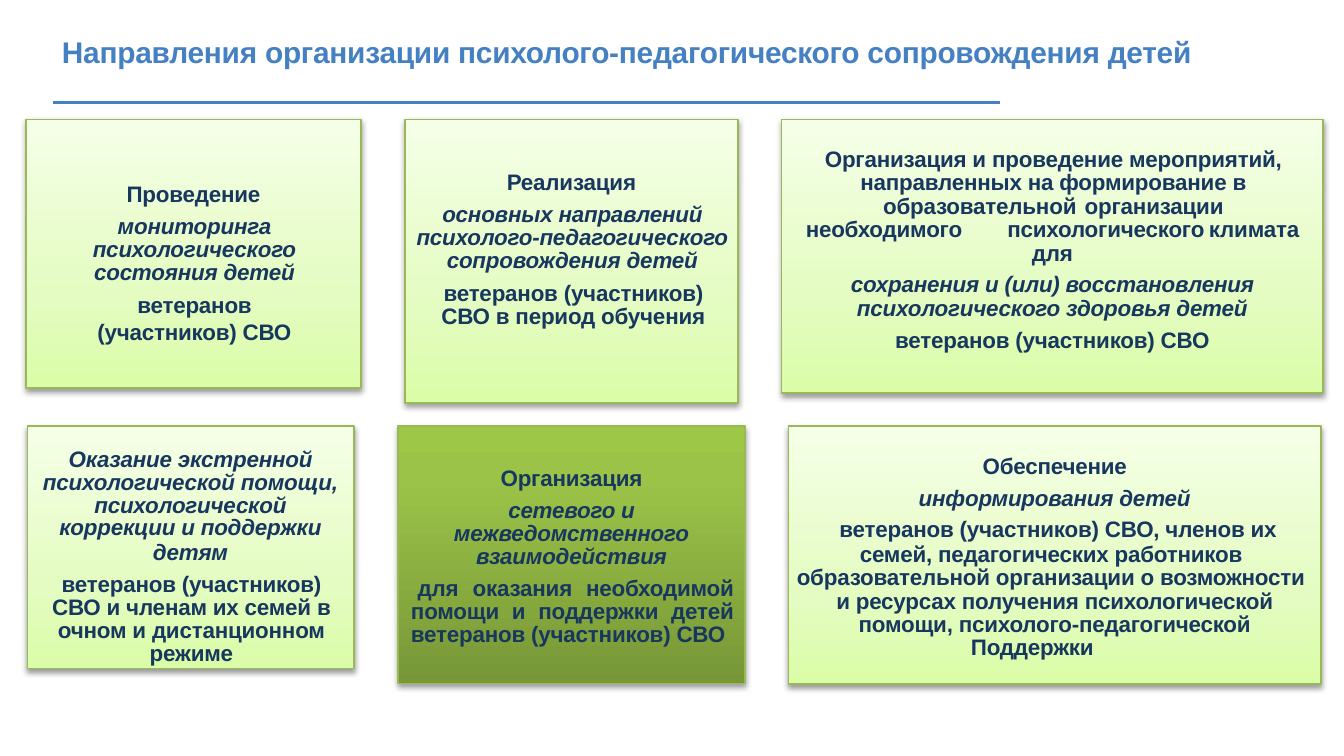
from dataclasses import dataclass
from typing import Optional, Union

from lxml.etree import SubElement
from pptx import Presentation
from pptx.dml.color import RGBColor
from pptx.enum.shapes import MSO_CONNECTOR, MSO_SHAPE
from pptx.enum.text import MSO_ANCHOR, PP_ALIGN
from pptx.oxml.ns import qn
from pptx.util import Length, Pt

BLUE, NAVY, GREEN = "4480C2", "17375E", "98B955"
LIGHT = ((0, "DAFDA7"), (35, "E4FCC2"), (100, "F5FFE7"))
DARK = ((0, "779737"), (80, "9BC348"), (100, "9DC746"))
TOP_ROW, BOTTOM_ROW = 64, 228.3


@dataclass
class Line:
    """One paragraph of a card; lengths in points, a float spacing is a ratio."""
    text: str
    italic: bool = False
    before: float = 0
    spacing: Optional[Union[float, Length]] = None
    left: float = 0
    right: float = 0
    first: float = 0
    tabs: tuple = ()
    align: PP_ALIGN = PP_ALIGN.CENTER


@dataclass
class Card:
    left: float
    top: float
    width: float
    height: float
    inset: float
    lines: list
    gradient: tuple = LIGHT


CARDS = [
    Card(13.9, TOP_ROW, 179.6, 143.8, 32.5, [
        Line("Проведение"),
        Line("мониторинга психологического состояния детей", True, 4.8, 0.86, 31, 30),
        Line("ветеранов (участников) СВО", False, 2.9, None, 31, 30),
    ]),
    Card(216.9, TOP_ROW, 178.5, 152, 26, [
        Line("Реализация"),
        Line("основных направлений психолого-педагогического сопровождения детей",
             True, 4.9, 0.86, 1, 0),
        Line("ветеранов (участников) СВО в период обучения", False, 4.9, Pt(12.5), 13, 11),
    ]),
    Card(418.8, TOP_ROW, 290, 146.6, 16, [
        Line("Организация и проведение мероприятий, направленных на формирование в "
             "образовательной\tорганизации", False, 0, 0.86, 20, 19, tabs=(139,)),
        Line("необходимого\tпсихологического\tклимата для", False, 0.1, Pt(12.5),
             11, 11, tabs=(109.4, 230.4)),
        Line("сохранения и (или) восстановления психологического здоровья детей",
             True, 4.6, Pt(12.5), 32, 32),
        Line("ветеранов (участников) СВО", False, 2.8),
    ]),
    Card(14.6, BOTTOM_ROW, 175, 130, 12.2, [
        Line("Оказание экстренной психологической помощи, психологической",
             True, 0, 0.86, 6, 6),
        Line("коррекции и поддержки", True, 0, Pt(11.6)),
        Line("детям", True, 0, Pt(13.4)),
        Line("ветеранов (участников) СВО и членам их семей в очном и дистанционном режиме",
             False, 4.7, 0.86, 8, 7),
    ]),
    Card(213.2, BOTTOM_ROW, 186, 138, 20.3, [
        Line("Организация"),
        Line("сетевого и межведомственного взаимодействия", True, 4.8, 0.86, 20, 20),
        Line("для оказания необходимой помощи и поддержки детей ветеранов (участников) СВО",
             False, 4.8, 0.86, 7, 6, 3.6, align=PP_ALIGN.JUSTIFY),
    ], DARK),
    Card(422.4, BOTTOM_ROW, 285.4, 138.2, 13.9, [
        Line("Обеспечение"),
        Line("информирования детей", True, 2.9),
        Line("ветеранов (участников) СВО, членов их", False, 2.9, Pt(13.4), 3.6),
        Line("семей, педагогических работников образовательной организации о возможности",
             False, 1, Pt(12.5), 3, 7),
        Line("и ресурсах получения психологической помощи, психолого-педагогической",
             False, 0.1, Pt(12.4), 22, 22),
        Line("Поддержки", False, 0, Pt(12.3), 0, 24),
    ]),
]


def colour(value: str) -> RGBColor:
    return RGBColor.from_string(value)


def add_run(paragraph, text: str, size: float, ink: str, italic: bool = False) -> None:
    run = paragraph.add_run()
    run.text = text
    font_format = {"name": "Arial", "size": Pt(size), "bold": True, "italic": italic}
    for name, value in font_format.items():
        setattr(run.font, name, value)
    run.font.color.rgb = colour(ink)
    run.font._element.set("spc", "-10")


def format_frame(frame, inset: float) -> None:
    frame_format = {"word_wrap": True, "vertical_anchor": MSO_ANCHOR.TOP,
                    "margin_left": 0, "margin_right": 0,
                    "margin_top": Pt(inset), "margin_bottom": 0}
    for name, value in frame_format.items():
        setattr(frame, name, value)


def add_line(paragraph, line: Line) -> None:
    paragraph_format = {"alignment": line.align, "space_before": Pt(line.before),
                        "line_spacing": line.spacing}
    for name, value in paragraph_format.items():
        setattr(paragraph, name, value)
    properties = paragraph._p.get_or_add_pPr()
    indents = {"marL": line.left, "marR": line.right, "indent": line.first}
    for name, value in indents.items():
        properties.set(name, str(int(Pt(value))))
    if line.tabs:
        tab_list = SubElement(properties, qn("a:tabLst"))
        for position in line.tabs:
            SubElement(tab_list, qn("a:tab"), pos=str(int(Pt(position))), algn="l")
    add_run(paragraph, line.text, 12, NAVY, line.italic)


def set_gradient(shape, stops: tuple) -> None:
    """Fill from bottom to top through the given percent and colour stops."""
    shape.fill.gradient()
    shape.fill.gradient_angle = 90
    stop_list = shape._element.spPr.find(qn("a:gradFill")).find(qn("a:gsLst"))
    for old_stop in list(stop_list):
        stop_list.remove(old_stop)
    for percent, value in stops:
        stop = SubElement(stop_list, qn("a:gs"), pos=str(percent * 1000))
        SubElement(stop, qn("a:srgbClr"), val=value)


def add_shadow(shape) -> None:
    shape.shadow.inherit = False
    effects = shape._element.spPr.find(qn("a:effectLst"))
    shadow = SubElement(effects, qn("a:outerShdw"), blurRad=str(int(Pt(3.1))),
                        dist=str(int(Pt(1.6))), dir="5400000", rotWithShape="0")
    ink = SubElement(shadow, qn("a:srgbClr"), val="000000")
    SubElement(ink, qn("a:alpha"), val="38000")


def add_card(slide, card: Card) -> None:
    shape = slide.shapes.add_shape(MSO_SHAPE.RECTANGLE, Pt(card.left), Pt(card.top),
                                   Pt(card.width), Pt(card.height))
    set_gradient(shape, card.gradient)
    shape.line.color.rgb = colour(GREEN)
    shape.line.width = Pt(0.75)
    add_shadow(shape)
    frame = shape.text_frame
    format_frame(frame, card.inset)
    for index, line in enumerate(card.lines):
        add_line(frame.add_paragraph() if index else frame.paragraphs[0], line)


def add_heading(slide) -> None:
    box = slide.shapes.add_textbox(Pt(33.2), Pt(17.3), Pt(655), Pt(20))
    format_frame(box.text_frame, 1)
    add_run(box.text_frame.paragraphs[0],
            "Направления организации психолого-педагогического сопровождения детей",
            16, BLUE)
    rule = slide.shapes.add_connector(MSO_CONNECTOR.STRAIGHT,
                                      Pt(28.3), Pt(55.1), Pt(535.8), Pt(55.1))
    rule.line.color.rgb = colour(BLUE)
    rule.line.width = Pt(1.5)
    SubElement(rule._element.spPr, qn("a:effectLst"))


def main() -> None:
    presentation = Presentation()
    presentation.slide_width, presentation.slide_height = Pt(720), Pt(405)
    slide = presentation.slides.add_slide(presentation.slide_layouts[6])
    # Heading and its rule
    add_heading(slide)
    # Two rows of cards
    for card in CARDS:
        add_card(slide, card)
    presentation.save("out.pptx")


if __name__ == "__main__":
    main()
